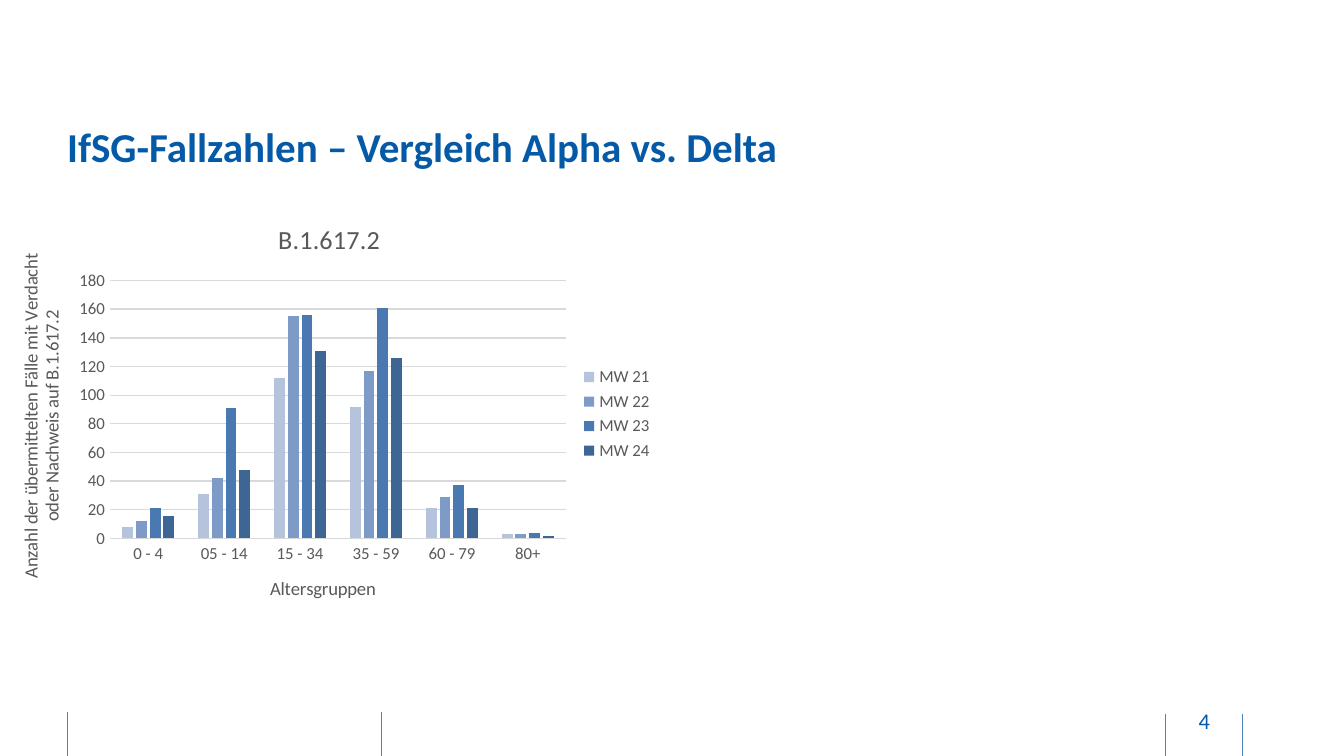
from lxml import etree
from pptx import Presentation
from pptx import util as u
from pptx.chart import data
from pptx.dml import color
from pptx.enum import chart as c
from pptx.enum import shapes, text
from pptx.oxml import ns


def paint(hex_string):
    return color.RGBColor.from_string(hex_string)


def write(frame, wording, size, hex_string, bold=False):
    run = frame.paragraphs[0].add_run()
    run.text = wording
    run.font.name = "Calibri"
    run.font.size = u.Pt(size)
    run.font.bold = bold
    run.font.color.rgb = paint(hex_string)


presentation = Presentation()
presentation.slide_width = u.Inches(10)
presentation.slide_height = presentation.slide_width * 9 // 16
column = presentation.slide_width / 100
row = presentation.slide_height / 100
slide = presentation.slides.add_slide(presentation.slide_layouts[6])

for left, top in ((86.7, 94.4), (28.4, 94.25), (5, 94.2), (92.46, 94.4)):
    x = int(left * column)
    divider = slide.shapes.add_connector(
        shapes.MSO_CONNECTOR.STRAIGHT, x, int(top * row), x, int((top + 6) * row))
    divider.line.color.rgb = paint("4F81BD")
    divider.line.width = u.Pt(0.5)
    etree.SubElement(divider._element.spPr, ns.qn("a:effectLst"))

boxes = (
    ("4", 86.9, 92.7, 5.4, 5.33, 0.05, 12, False, text.PP_ALIGN.CENTER),
    ("IfSG-Fallzahlen – Vergleich Alpha vs. Delta", 5, 12.44, 87.3, 13.87, 0, 22, True,
     text.PP_ALIGN.LEFT),
)
for wording, left, top, width, height, inset, size, bold, alignment in boxes:
    box = slide.shapes.add_textbox(
        int(left * column), int(top * row), int(width * column), int(height * row))
    frame = box.text_frame
    frame.word_wrap = True
    frame.vertical_anchor = text.MSO_ANCHOR.MIDDLE
    frame.margin_left = frame.margin_right = 0
    frame.margin_top = frame.margin_bottom = u.Inches(inset)
    frame.paragraphs[0].alignment = alignment
    write(frame, wording, size, "045AA6", bold)

weeks = (
    ("MW 21", (8, 31, 112, 92, 21, 3), "B6C3DC"),
    ("MW 22", (12, 42, 155, 117, 29, 3), "7E9BC8"),
    ("MW 23", (21, 91, 156, 161, 37, 4), "4A79B1"),
    ("MW 24", (16, 48, 131, 126, 21, 2), "3E6695"),
)
case_data = data.CategoryChartData()
case_data.categories = ["0 - 4", "05 - 14", "15 - 34", "35 - 59", "60 - 79", "80+"]
for name, cases, fill in weeks:
    case_data.add_series(name, cases)

chart = slide.shapes.add_chart(
    c.XL_CHART_TYPE.COLUMN_CLUSTERED, int(-0.9 * column), int(26.31 * row),
    int(50.6 * column), int(56.89 * row), case_data).chart
chart.font.name = "Calibri"
chart.font.size = u.Pt(10)
chart.font.color.rgb = paint("000000")

plot = chart.plots[0]
plot.vary_by_categories = False
plot.gap_width = 219
plot.overlap = -27
for series, (name, cases, fill) in zip(plot.series, weeks):
    series.format.fill.solid()
    series.format.fill.fore_color.rgb = paint(fill)

chart.has_legend = True
chart.legend.position = c.XL_LEGEND_POSITION.RIGHT
chart.legend.include_in_layout = False
for axis in (chart.category_axis, chart.value_axis):
    axis.major_tick_mark = axis.minor_tick_mark = c.XL_TICK_MARK.NONE
for font in (chart.legend.font, chart.category_axis.tick_labels.font,
             chart.value_axis.tick_labels.font):
    font.name = "Calibri"
    font.size = u.Pt(9)
    font.color.rgb = paint("595959")

chart.value_axis.minimum_scale = 0
chart.value_axis.maximum_scale = 180
chart.value_axis.major_unit = 20
chart.value_axis.format.line.fill.background()
for line in (chart.category_axis.format.line, chart.value_axis.major_gridlines.format.line):
    line.color.rgb = paint("D9D9D9")
    line.width = u.Pt(0.75)

chart.has_title = True
write(chart.chart_title.text_frame, "B.1.617.2", 14, "595959")
write(chart.category_axis.axis_title.text_frame, "Altersgruppen", 10, "595959")
value_title = chart.value_axis.axis_title.text_frame
write(value_title, "Anzahl der übermittelten Fälle mit Verdacht oder Nachweis auf B.1.617.2",
      10, "595959")
value_title._txBody.bodyPr.set("rot", "-5400000")
value_title._txBody.bodyPr.set("vert", "horz")

places = (
    ("c:chart/c:title", 1, {"x": 0.42, "y": 0.04}),
    ("c:chart/c:plotArea/c:catAx/c:title", 1, {"x": 0.41, "y": 0.87}),
    ("c:chart/c:plotArea/c:valAx/c:title", 1, {"x": 0.04, "y": 0.12}),
    ("c:chart/c:legend", 1, {"x": 0.86, "y": 0.38, "w": 0.13, "h": 0.24}),
    ("c:chart/c:plotArea", 0, {"x": 0.18, "y": 0.19, "w": 0.67, "h": 0.6}),
)
for route, index, shares in places:
    element = chart._chartSpace.xpath(route)[0]
    for old_layout in element.findall(ns.qn("c:layout")):
        element.remove(old_layout)
    layout = etree.Element(ns.qn("c:layout"))
    manual = etree.SubElement(layout, ns.qn("c:manualLayout"))
    if route.endswith("plotArea"):
        etree.SubElement(manual, ns.qn("c:layoutTarget"), val="inner")
    for mode in ("xMode", "yMode"):
        etree.SubElement(manual, ns.qn("c:" + mode), val="edge")
    for key, share in shares.items():
        etree.SubElement(manual, ns.qn("c:" + key), val=str(share))
    element.insert(index, layout)

presentation.save("out.pptx")
